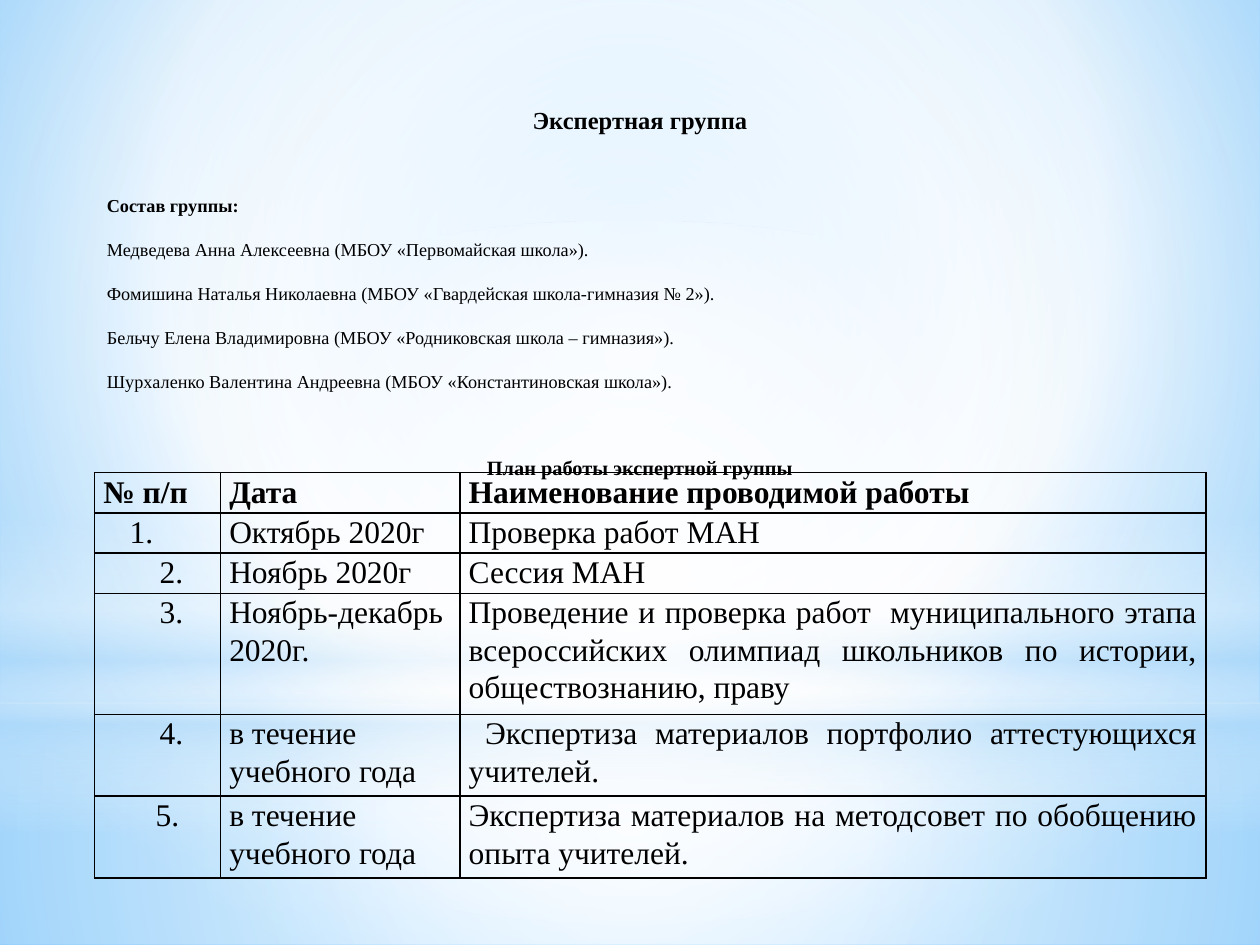
from dataclasses import dataclass
from typing import Optional

from lxml import etree
from pptx import Presentation
from pptx.dml.color import RGBColor
from pptx.enum.shapes import MSO_SHAPE
from pptx.enum.text import MSO_ANCHOR, PP_ALIGN
from pptx.oxml import parse_xml
from pptx.oxml.ns import nsdecls, qn
from pptx.util import Inches, Pt

RECT, OVAL = MSO_SHAPE.RECTANGLE, MSO_SHAPE.OVAL
LEFT, CENTER, JUSTIFY = PP_ALIGN.LEFT, PP_ALIGN.CENTER, PP_ALIGN.JUSTIFY
TOP = MSO_ANCHOR.TOP


@dataclass(frozen=True)
class Theme:
    font: str = "Times New Roman"
    ink: str = "000000"
    white: str = "FFFFFF"
    haze: str = "B4DCFA"
    sky: str = "9ED5FF"
    deep_sky: str = "5BB9FF"
    title_size: float = 14
    subtitle_size: float = 11.6
    body_size: float = 10.4
    table_size: float = 18
    border_width: float = 1


THEME = Theme()


@dataclass(frozen=True)
class Stop:
    position: int
    color: str
    alpha: int = 100


@dataclass(frozen=True)
class Glow:
    """A backdrop shape; without a focus its gradient runs downwards."""
    kind: MSO_SHAPE
    top: float
    height: float
    stops: tuple[Stop, ...]
    focus: Optional[tuple[int, int, int, int]] = (50, 50, 50, 50)


@dataclass(frozen=True)
class Line:
    text: str
    size: float = THEME.body_size
    bold: bool = False
    align: PP_ALIGN = LEFT
    before: float = 12.6


@dataclass(frozen=True)
class CellStyle:
    align: PP_ALIGN = JUSTIFY
    margin: float = 0
    indent: float = 0


@dataclass(frozen=True)
class PlanRow:
    height: float
    texts: tuple[str, str, str]
    styles: tuple[CellStyle, CellStyle, CellStyle]


WHITE, HAZE = THEME.white, THEME.haze
GLOWS = (
    Glow(RECT, 5.58, 1.92, (Stop(0, WHITE, 91), Stop(37, WHITE, 76), Stop(100, HAZE, 79))),
    Glow(RECT, 0, 5.58, (Stop(0, WHITE, 89), Stop(48, WHITE, 62), Stop(100, HAZE, 79))),
    Glow(RECT, 4.12, 2.5, (Stop(0, WHITE, 0), Stop(29, WHITE, 30), Stop(45, HAZE, 40),
                           Stop(55, WHITE, 26), Stop(65, HAZE, 60), Stop(100, WHITE, 0)), None),
    Glow(OVAL, 1.75, 5.58, (Stop(0, WHITE), Stop(56, WHITE, 0))),
)

GROUP_LINES = (
    Line("Экспертная группа", THEME.title_size, True, CENTER, 0),
    Line("Состав группы:", bold=True, before=34.5),
    Line("Медведева Анна Алексеевна (МБОУ «Первомайская школа»)."),
    Line("Фомишина Наталья Николаевна (МБОУ «Гвардейская школа-гимназия № 2»)."),
    Line("Бельчу Елена Владимировна (МБОУ «Родниковская школа – гимназия»)."),
    Line("Шурхаленко Валентина Андреевна (МБОУ «Константиновская школа»)."),
    Line("План работы экспертной группы", THEME.subtitle_size, True, CENTER, 36),
)

COLUMN_WIDTHS = (1, 1.9, 5.92)
PLAIN = CellStyle()
FLUSH = CellStyle(LEFT)
FIRST_NUMBER = CellStyle(LEFT, 0.21)
NUMBER = CellStyle(CENTER, 0.32, -0.1)
INDENTED = CellStyle(JUSTIFY, 0, 0.13)
PLAN = (
    PlanRow(0.32, ("№ п/п", "Дата", "Наименование проводимой работы"), (PLAIN, PLAIN, PLAIN)),
    PlanRow(0.32, ("1.", "Октябрь 2020г", "Проверка работ МАН"), (FIRST_NUMBER, PLAIN, PLAIN)),
    PlanRow(0.32, ("2.", "Ноябрь 2020г", "Сессия МАН"), (NUMBER, PLAIN, PLAIN)),
    PlanRow(0.96, ("3.", "Ноябрь-декабрь 2020г.",
                   "Проведение и проверка работ  муниципального этапа всероссийских "
                   "олимпиад школьников по истории, обществознанию, праву"),
            (NUMBER, FLUSH, PLAIN)),
    PlanRow(0.65, ("4.", "в течение учебного года",
                   "Экспертиза материалов портфолио аттестующихся учителей."),
            (NUMBER, FLUSH, INDENTED)),
    PlanRow(0.65, ("5. ", "в течение учебного года",
                   "Экспертиза материалов на методсовет по обобщению опыта учителей."),
            (NUMBER, FLUSH, PLAIN)),
)


def gradient(stops: tuple[Stop, ...], focus) -> etree._Element:
    marks = "".join(
        f'<a:gs pos="{s.position * 1000}"><a:srgbClr val="{s.color}">'
        f'<a:alpha val="{s.alpha * 1000}"/></a:srgbClr></a:gs>' for s in stops)
    if focus:
        sides = " ".join(f'{side}="{value * 1000}"' for side, value in zip("ltrb", focus))
        course = f'<a:path path="circle"><a:fillToRect {sides}/></a:path>'
    else:
        course = '<a:lin ang="5400000" scaled="0"/>'
    return parse_xml(f'<a:gradFill {nsdecls("a")} rotWithShape="1">'
                     f'<a:gsLst>{marks}</a:gsLst>{course}</a:gradFill>')


def fill_with_gradient(fill, properties, stops, focus) -> None:
    fill.solid()
    solid = properties.find(qn("a:solidFill"))
    properties.replace(solid, gradient(stops, focus))


def style_runs(paragraph, size: float, bold: bool) -> None:
    for run in paragraph.runs:
        run.font.name = THEME.font
        run.font.size = Pt(size)
        run.font.bold = bold
        run.font.color.rgb = RGBColor.from_string(THEME.ink)


def draw_glow(slide, glow: Glow) -> None:
    shape = slide.shapes.add_shape(glow.kind, 0, Inches(glow.top), Inches(10), Inches(glow.height))
    shape.shadow.inherit = False
    shape.line.fill.background()
    fill_with_gradient(shape.fill, shape._element.spPr, glow.stops, glow.focus)


def draw_border(cell) -> None:
    properties = cell._tc.get_or_add_tcPr()
    for position, side in enumerate("LRTB"):
        properties.insert(position, parse_xml(
            f'<a:ln{side} {nsdecls("a")} w="{Pt(THEME.border_width)}"><a:solidFill>'
            f'<a:srgbClr val="{THEME.ink}"/></a:solidFill></a:ln{side}>'))


def fill_cell(cell, text: str, style: CellStyle, bold: bool) -> None:
    cell.fill.background()
    cell.margin_left = cell.margin_right = Inches(0.07)
    cell.margin_top = cell.margin_bottom = 0
    cell.text_frame.text = text
    paragraph = cell.text_frame.paragraphs[0]
    paragraph.alignment = style.align
    paragraph.line_spacing = 1.07
    properties = paragraph._p.get_or_add_pPr()
    properties.set("marL", str(Inches(style.margin)))
    properties.set("indent", str(Inches(style.indent)))
    style_runs(paragraph, THEME.table_size, bold)
    draw_border(cell)


def draw_plan(slide) -> None:
    table = slide.shapes.add_table(
        len(PLAN), len(COLUMN_WIDTHS), Inches(0.75), Inches(3.75),
        Inches(sum(COLUMN_WIDTHS)), Inches(sum(row.height for row in PLAN))).table
    table.first_row = table.horz_banding = False
    for column, width in zip(table.columns, COLUMN_WIDTHS):
        column.width = Inches(width)
    for index, plan_row in enumerate(PLAN):
        table.rows[index].height = Inches(plan_row.height)
        for cell, text, style in zip(table.rows[index].cells, plan_row.texts, plan_row.styles):
            fill_cell(cell, text, style, bold=index == 0)


def draw_group(slide) -> None:
    frame = slide.shapes.add_textbox(Inches(0.75), Inches(0.73), Inches(8.66), Inches(3.2)).text_frame
    frame.word_wrap = True
    frame.vertical_anchor = TOP
    frame.margin_top = Inches(0.1)
    frame.text = "\n".join(line.text for line in GROUP_LINES)
    for paragraph, line in zip(frame.paragraphs, GROUP_LINES):
        paragraph.alignment = line.align
        if line.before:
            paragraph.space_before = Pt(line.before)
        style_runs(paragraph, line.size, line.bold)


def main() -> None:
    presentation = Presentation()
    presentation.slide_width, presentation.slide_height = Inches(10), Inches(7.5)
    slide = presentation.slides.add_slide(presentation.slide_layouts[6])

    # Sky backdrop
    backdrop = slide.background.fill
    backdrop.solid()
    fill_with_gradient(backdrop, slide._element.find(".//" + qn("p:bgPr")),
                       (Stop(0, THEME.sky), Stop(60, WHITE), Stop(100, THEME.deep_sky)),
                       (20, 10, 20, 60))
    for glow in GLOWS:
        draw_glow(slide, glow)

    # Work plan and group members
    draw_plan(slide)
    draw_group(slide)
    presentation.save("out.pptx")


if __name__ == "__main__":
    main()
